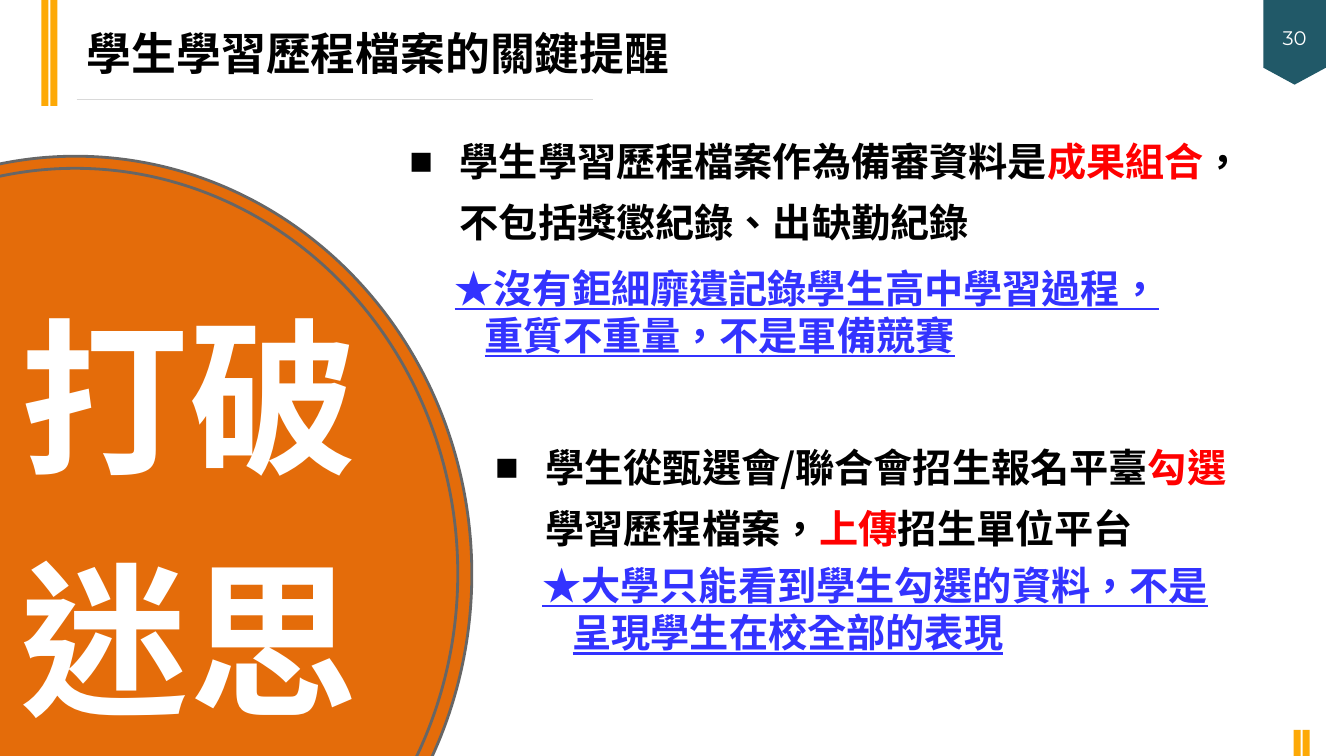
from lxml.etree import SubElement
from pptx import Presentation
from pptx.dml.color import RGBColor
from pptx.enum.lang import MSO_LANGUAGE_ID
from pptx.enum.shapes import MSO_CONNECTOR, MSO_SHAPE
from pptx.enum.text import MSO_ANCHOR, MSO_AUTO_SIZE, PP_ALIGN
from pptx.oxml.ns import qn
from pptx.util import Pt

PX = 9144  # 100 px to the inch
BLACK, WHITE, RED, BLUE = "000000", "FFFFFF", "FF0000", "3333FF"
AMBER, ORANGE, GREY, TEAL = "FDA907", "E46C0A", "666666", "215968"
CJK = "Noto Sans CJK SC"


def px(*lengths):
    return [n * PX for n in lengths]


def rgb(code):
    return RGBColor.from_string(code)


class SlideBuilder:
    def __init__(self, slide, font="Arial", size=28):
        self.s, self.font, self.size = slide, font, size

    def place(self, shape, box):
        shape.left, shape.top, shape.width, shape.height = px(*box)

    def shape(self, kind, box, fill, line=None):
        sp = self.s.shapes.add_shape(kind, *px(*box))
        sp.shadow.inherit = False
        sp.fill.solid()
        sp.fill.fore_color.rgb = rgb(fill)
        if line:
            sp.line.color.rgb = rgb(line)
            sp.line.width = Pt(2)
        else:
            sp.line.fill.background()
        return sp

    def rule(self, x1, y1, x2, y2, color):
        c = self.s.shapes.add_connector(MSO_CONNECTOR.STRAIGHT, *px(x1, y1, x2, y2))
        c.line.color.rgb = rgb(color)
        c.line.width = Pt(0.75)
        SubElement(c._element.spPr, qn("a:effectLst"))

    def run(self, p, text, color=BLACK, font=None, size=None, bold=True, underline=None):
        r = p.add_run()
        r.text = text
        f = r.font
        f.name, f.size = font or self.font, Pt(size or self.size)
        f.bold, f.underline = bold, underline
        f.color.rgb = rgb(color)
        f.language_id = MSO_LANGUAGE_ID.TRADITIONAL_CHINESE

    def indent(self, p, hang, bullet=None):
        """Set a hanging indent, with a bullet sign if one is given."""
        pPr = p._p.get_or_add_pPr()
        pPr.set("marL", str(hang * PX))
        pPr.set("indent", str(-hang * PX))
        if bullet:
            SubElement(pPr, qn("a:buFont"), typeface="Arial")
            SubElement(pPr, qn("a:buChar"), char=bullet)

    def title(self, box, text):
        sp = self.s.shapes.title
        self.place(sp, box)
        tf = sp.text_frame
        tf.auto_size = MSO_AUTO_SIZE.NONE
        tf.vertical_anchor = MSO_ANCHOR.MIDDLE
        p = tf.paragraphs[0]
        p.alignment = PP_ALIGN.LEFT
        self.run(p, text, font="Roboto Condensed", size=32)

    def bullet_list(self, index, box, lines):
        """Fill a body placeholder with one bullet of several broken lines."""
        sp = self.s.placeholders[index]
        self.place(sp, box)
        tf = sp.text_frame
        tf.auto_size = MSO_AUTO_SIZE.NONE
        p = tf.paragraphs[0]
        p.line_spacing, p.space_before = 1.3, Pt(0)
        self.indent(p, 50, "■")
        for i, line in enumerate(lines):
            if i:
                p.add_line_break()
            for run in line:
                self.run(p, *run)

    def text(self, box, text, hang=0, spacing=None, **style):
        tf = self.s.shapes.add_textbox(*px(*box)).text_frame
        tf.word_wrap = True
        p = tf.paragraphs[0]
        p.line_spacing = spacing
        if hang:
            self.indent(p, hang)
        self.run(p, text, **style)

    def page_tag(self, box, number):
        sp = self.shape(MSO_SHAPE.FLOWCHART_OFFPAGE_CONNECTOR, box, TEAL)
        tf = sp.text_frame
        tf.vertical_anchor = MSO_ANCHOR.MIDDLE
        p = tf.paragraphs[0]
        p.alignment, p.line_spacing = PP_ALIGN.CENTER, 1.3
        self.run(p, number, WHITE, "Montserrat", 14, bold=False)


def main():
    prs = Presentation()
    prs.slide_width, prs.slide_height = px(1333, 750)
    b = SlideBuilder(prs.slides.add_slide(prs.slide_layouts[3]))

    for left, top, height in ((41, 0, 105), (1283, 724, 26)):
        for step in (0, 9):
            b.shape(MSO_SHAPE.RECTANGLE, (left + step, top, 7, height), AMBER)
    b.rule(76, 99, 588, 99, "D9D9D9")
    b.page_tag((1253, 0, 62, 84), "30")
    for disc in ((-318, 155, 786, 829), (-305, 167, 759, 804)):
        b.shape(MSO_SHAPE.OVAL, disc, ORANGE, GREY)

    b.title((76, 20, 867, 64), "學生學習歷程檔案的關鍵提醒")
    b.text((11, 246, 355, 474), "打破迷思", spacing=1.2, color=WHITE, font=CJK, size=120)

    b.bullet_list(1, (396, 117, 937, 148), [
        [("學生學習歷程檔案作為備審資料是",), ("成果組合", RED), ("，",)],
        [("不包括獎懲紀錄、出缺勤紀錄",)],
    ])
    b.bullet_list(2, (481, 421, 787, 148), [
        [("學生從甄選會",), ("/", BLACK, CJK), ("聯合會招生報名平臺",), ("勾選", RED)],
        [("學習歷程檔案，",), ("上傳", RED), ("招生單位平台",)],
    ])
    for box, note in (
        ((441, 257, 742, 104), "★沒有鉅細靡遺記錄學生高中學習過程，重質不重量，不是軍備競賽"),
        ((528, 552, 709, 104), "★大學只能看到學生勾選的資料，不是呈現學生在校全部的表現"),
    ):
        b.text(box, note, hang=30, color=BLUE, underline=True)

    prs.save("out.pptx")


if __name__ == "__main__":
    main()
